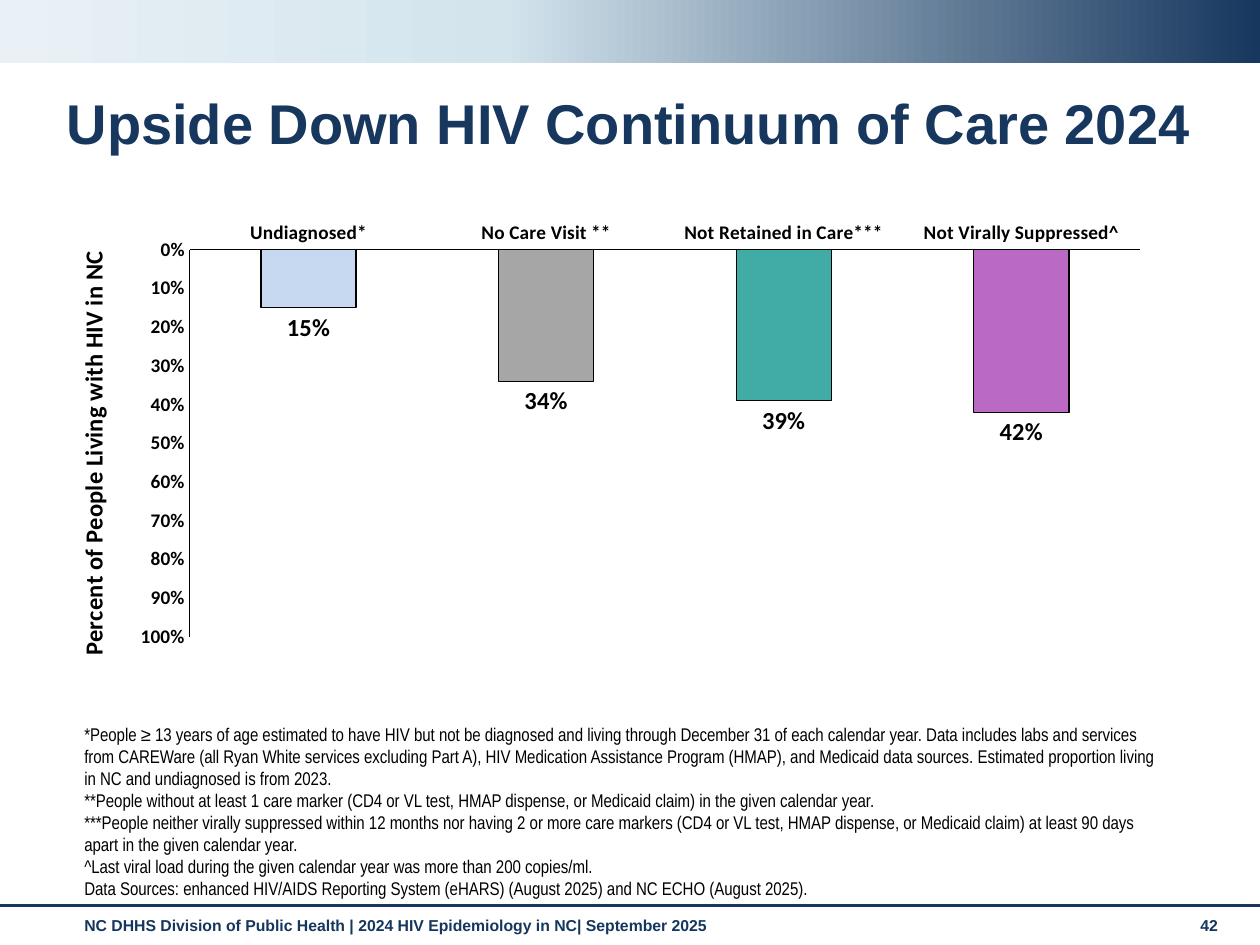
import pptx
import pptx.chart.data
import pptx.dml.color
import pptx.enum.chart
import pptx.enum.shapes
import pptx.enum.text
import pptx.oxml
import pptx.oxml.ns
import pptx.util
from pptx.util import Cm, Pt

RGBColor = pptx.dml.color.RGBColor
NAVY = RGBColor(0x17, 0x37, 0x5E)
FOOTER_NAVY = RGBColor(0x15, 0x36, 0x5E)
BLACK = RGBColor(0, 0, 0)
BAND_STOPS = [
    (0, RGBColor(0xE9, 0xF1, 0xF6)),
    (40, RGBColor(0xD3, 0xE4, 0xED)),
    (100, NAVY),
]
BARS = [
    ("Undiagnosed*", 0.15, RGBColor(0xC6, 0xD9, 0xF1)),
    ("No Care Visit **", 0.34, RGBColor(0xA6, 0xA6, 0xA6)),
    ("Not Retained in Care***", 0.39, RGBColor(0x41, 0xAB, 0xA6)),
    ("Not Virally Suppressed^", 0.42, RGBColor(0xBA, 0x6A, 0xC4)),
]
FOOTNOTES = [
    "*People ≥ 13 years of age estimated to have HIV but not be diagnosed and living through "
    "December 31 of each calendar year. Data includes labs and services from CAREWare (all Ryan "
    "White services excluding Part A), HIV Medication Assistance Program (HMAP), and Medicaid data "
    "sources. Estimated proportion living in NC and undiagnosed is from 2023.",
    "**People without at least 1 care marker (CD4 or VL test, HMAP dispense, or Medicaid claim) "
    "in the given calendar year.",
    "***People neither virally suppressed within 12 months nor having 2 or more care markers "
    "(CD4 or VL test, HMAP dispense, or Medicaid claim) at least 90 days apart in the given "
    "calendar year.",
    "^Last viral load during the given calendar year was more than 200 copies/ml.",
    "Data Sources: enhanced HIV/AIDS Reporting System (eHARS) (August 2025) and NC ECHO "
    "(August 2025).",
]


def set_font(font, name, size, color, bold):
    """Apply name, point size, colour and weight to a font."""
    font.name = name
    font.size = Pt(size)
    font.color.rgb = color
    font.bold = bold


def add_text(slide, box, text, name, size, color, bold=False):
    """Add a wrapping text box and return its text frame."""
    text_frame = slide.shapes.add_textbox(*box).text_frame
    text_frame.word_wrap = True
    text_frame.text = text
    for paragraph in text_frame.paragraphs:
        for run in paragraph.runs:
            set_font(run.font, name, size, color, bold)
    return text_frame


def add_band(slide, left, top, width, height):
    """Draw the gradient band across the top."""
    band = slide.shapes.add_shape(
        pptx.enum.shapes.MSO_SHAPE.RECTANGLE, left, top, width, height)
    band.shadow.inherit = False
    band.line.fill.background()
    band.fill.gradient()
    band.fill.gradient_angle = 0
    stops = band._element.spPr.find(".//" + pptx.oxml.ns.qn("a:gsLst"))
    for stop in list(stops):
        stops.remove(stop)
    for position, color in BAND_STOPS:
        stops.append(pptx.oxml.parse_xml(
            f'<a:gs {pptx.oxml.ns.nsdecls("a")} pos="{position * 1000}">'
            f'<a:srgbClr val="{color}"/></a:gs>'))


def place_title(slide, left, top, width, height):
    """Move and format the title placeholder."""
    title = slide.shapes.title
    title.left, title.top, title.width, title.height = left, top, width, height
    text_frame = title.text_frame
    text_frame.text = "Upside Down HIV Continuum of Care 2024"
    text_frame.auto_size = pptx.enum.text.MSO_AUTO_SIZE.NONE
    text_frame.vertical_anchor = pptx.enum.text.MSO_ANCHOR.MIDDLE
    paragraph = text_frame.paragraphs[0]
    paragraph.alignment = pptx.enum.text.PP_ALIGN.LEFT
    paragraph.line_spacing = 0.9
    set_font(paragraph.runs[0].font, "Arial", 32, NAVY, True)


def add_layout(parent, following, **values):
    """Give a chart part a manual layout, placed before the named siblings."""
    for old in parent.findall(pptx.oxml.ns.qn("c:layout")):
        parent.remove(old)
    entries = "".join(f'<c:{key} val="{value}"/>' for key, value in values.items())
    layout = pptx.oxml.parse_xml(
        f'<c:layout {pptx.oxml.ns.nsdecls("c")}><c:manualLayout>{entries}'
        "</c:manualLayout></c:layout>")
    parent.insert_element_before(layout, *following)


def style_axis(axis):
    """Apply the line, tick and label style shared by both axes."""
    axis.has_major_gridlines = False
    axis.major_tick_mark = pptx.enum.chart.XL_TICK_MARK.NONE
    axis.minor_tick_mark = pptx.enum.chart.XL_TICK_MARK.NONE
    axis.format.line.color.rgb = BLACK
    axis.format.line.width = Pt(0.75)
    set_font(axis.tick_labels.font, "Calibri", 11, BLACK, True)


def add_continuum_chart(slide, left, top, width, height):
    """Add the column chart that hangs from a zero line at the top."""
    data = pptx.chart.data.CategoryChartData(number_format="0%")
    data.categories = [category for category, value, color in BARS]
    data.add_series("Series 1", [value for category, value, color in BARS])
    chart = slide.shapes.add_chart(
        pptx.enum.chart.XL_CHART_TYPE.COLUMN_CLUSTERED,
        left, top, width, height, data).chart
    chart.has_legend = False
    chart.has_title = False
    set_font(chart.font, "Calibri", 10, BLACK, False)

    style_axis(chart.category_axis)
    value_axis = chart.value_axis
    style_axis(value_axis)
    value_axis.reverse_order = True
    value_axis.minimum_scale = 0
    value_axis.maximum_scale = 1
    value_axis.major_unit = 0.1
    value_axis.tick_labels.number_format = "0%"
    value_axis.tick_labels.number_format_is_linked = False
    axis_title = value_axis.axis_title
    axis_title.text_frame.text = "Percent of People Living with HIV in NC"
    set_font(axis_title.text_frame.paragraphs[0].runs[0].font, "Calibri", 14, BLACK, True)
    add_layout(axis_title._element, ("c:overlay", "c:spPr", "c:txPr"),
               xMode="edge", yMode="edge", x=0.03, y=0.06)

    plot = chart.plots[0]
    plot.gap_width = 150
    plot.vary_by_categories = False
    add_layout(chart._chartSpace.chart.plotArea, ("c:barChart",), layoutTarget="inner",
               xMode="edge", yMode="edge", x=0.134, y=0.065, w=0.837, h=0.681)

    series = plot.series[0]
    series.invert_if_negative = False
    for index, (category, value, color) in enumerate(BARS):
        point_format = series.points[index].format
        point_format.fill.solid()
        point_format.fill.fore_color.rgb = color
        point_format.line.color.rgb = BLACK
        point_format.line.width = Pt(0.75)
    labels = series.data_labels
    labels.show_value = True
    labels.position = pptx.enum.chart.XL_LABEL_POSITION.OUTSIDE_END
    labels.number_format = "0%"
    labels.number_format_is_linked = False
    set_font(labels.font, "Calibri", 14, BLACK, True)


def add_footnotes(slide, left, top, width, height):
    """Add the notes, which grow upward from the bottom of their box."""
    text_frame = add_text(slide, (left, top, width, height), "\n".join(FOOTNOTES),
                          "Arial Narrow", 10.5, BLACK)
    text_frame.vertical_anchor = pptx.enum.text.MSO_ANCHOR.BOTTOM


def add_footer(slide, left, top, width, height):
    """Add the rule, the source line and the page number."""
    rule = slide.shapes.add_connector(
        pptx.enum.shapes.MSO_CONNECTOR.STRAIGHT, left, top, left + width, top)
    rule.line.color.rgb = NAVY
    rule.line.width = Pt(1.75)
    rule._element.spPr.append(pptx.oxml.parse_xml(
        f'<a:effectLst {pptx.oxml.ns.nsdecls("a")}/>'))
    text_top = top + Cm(0.08)
    text_height = height - Cm(0.08)
    for offset, text_width, text in (
            (1.45, 22.2, "NC DHHS Division of Public Health | "
                         "2024 HIV Epidemiology in NC| September 2025"),
            (23.95, 1.12, "42")):
        add_text(slide, (left + Cm(offset), text_top, Cm(text_width), text_height),
                 text, "Arial", 9, FOOTER_NAVY, True)


def main():
    """Build and save the slide."""
    presentation = pptx.Presentation()
    presentation.slide_width = Cm(25.4)
    presentation.slide_height = Cm(19.05)
    slide = presentation.slides.add_slide(presentation.slide_layouts.get_by_name("Title Only"))
    add_band(slide, 0, 0, presentation.slide_width, Cm(1.27))
    place_title(slide, Cm(1.09), Cm(1.78), Cm(23.2), Cm(1.52))
    add_continuum_chart(slide, Cm(0.76), Cm(4.29), Cm(22.89), Cm(11.46))
    add_footnotes(slide, Cm(1.45), Cm(17.35), Cm(22.2), Cm(0.91))
    add_footer(slide, 0, Cm(18.26), presentation.slide_width, Cm(0.82))
    presentation.save("out.pptx")


if __name__ == "__main__":
    main()
